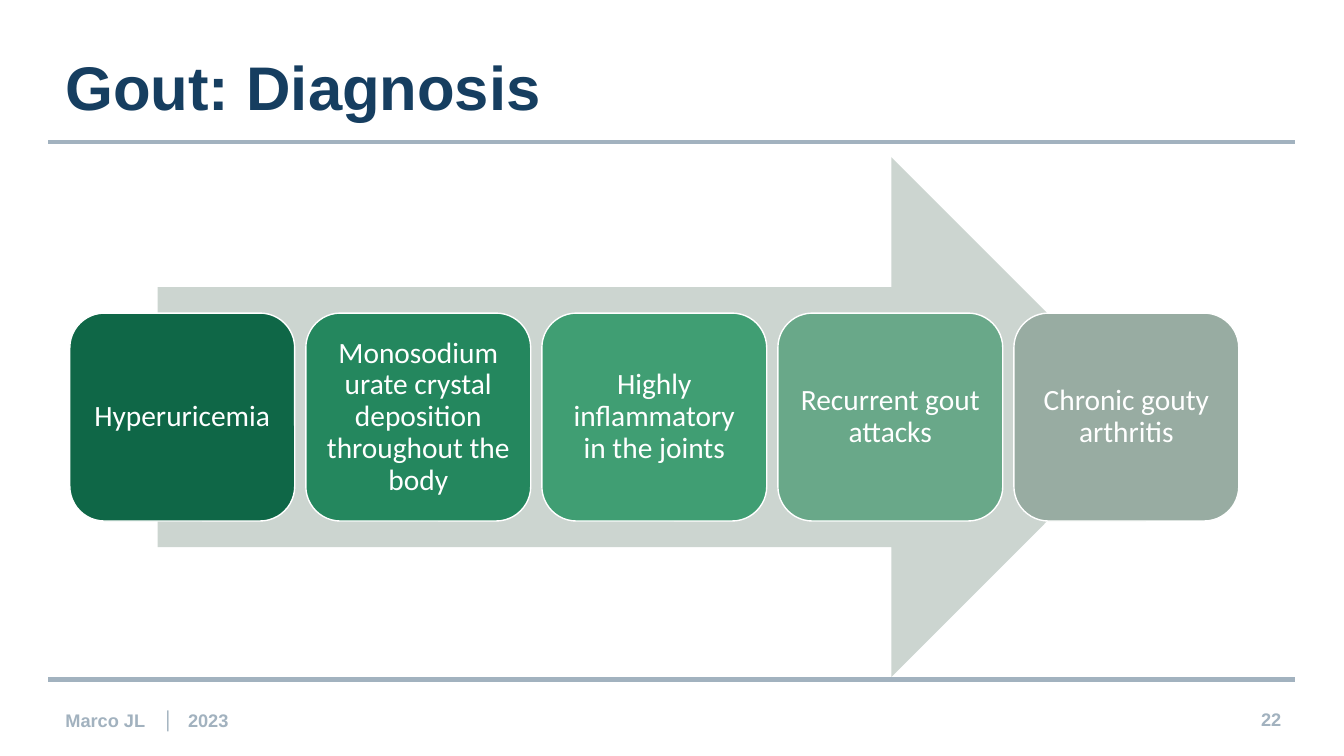
"""Build the gout diagnosis slide: five stages on a process arrow."""
from lxml import etree
from pptx import Presentation
from pptx.dml.color import RGBColor
from pptx.enum.shapes import MSO_CONNECTOR, MSO_SHAPE
from pptx.enum.text import MSO_ANCHOR, PP_ALIGN
from pptx.oxml.ns import qn
from pptx.util import Cm, Pt

ARROW, ROUNDED = MSO_SHAPE.RIGHT_ARROW, MSO_SHAPE.ROUNDED_RECTANGLE
STRAIGHT = MSO_CONNECTOR.STRAIGHT
LEFT, CENTER, RIGHT = PP_ALIGN.LEFT, PP_ALIGN.CENTER, PP_ALIGN.RIGHT
MIDDLE = MSO_ANCHOR.MIDDLE

COLORS = {
    "navy": "163E60", "muted": "A2B2BF", "white": "FFFFFF", "arrow": "CCD5D0",
    "stage1": "0F6747", "stage2": "24875E", "stage3": "409E73",
    "stage4": "69A889", "stage5": "98ACA2",
}
STAGES = [
    ("Hyperuricemia", "stage1"),
    ("Monosodium urate crystal deposition throughout the body", "stage2"),
    ("Highly inflammatory in the joints", "stage3"),
    ("Recurrent gout attacks", "stage4"),
    ("Chronic gouty arthritis", "stage5"),
]


def rgb(name):
    """Return the named colour."""
    return RGBColor.from_string(COLORS[name])


def style(r, size, color, font="Arial", bold=False):
    """Format one run."""
    r.font.size, r.font.name, r.font.bold = Pt(size), font, bold
    r.font.color.rgb = rgb(color)


def add_text(s, box, text, size, color, align=LEFT):
    """Add a bold text box and return its paragraph."""
    tf = s.shapes.add_textbox(*map(Cm, box)).text_frame
    tf.word_wrap = True
    p = tf.paragraphs[0]
    p.text, p.alignment = text, align
    for r in p.runs:
        style(r, size, color, bold=True)
    return p


def add_rule(s, x, y, width):
    """Draw a horizontal rule."""
    line = s.shapes.add_connector(STRAIGHT, Cm(x), Cm(y), Cm(x + width), Cm(y))
    line.line.color.rgb, line.line.width = rgb("muted"), Pt(3)
    etree.SubElement(line._element.spPr, qn("a:effectLst"))


def add_shape(s, kind, box, fill):
    """Add a filled shape without outline or shadow."""
    sp = s.shapes.add_shape(kind, *map(Cm, box))
    sp.shadow.inherit = False
    sp.fill.solid()
    sp.fill.fore_color.rgb = rgb(fill)
    sp.line.fill.background()
    return sp


def add_header(s, x, y, width):
    """Place the title and the rule below it."""
    p = add_text(s, (x + 0.18, y, width - 0.28, 2.08), "Gout: Diagnosis", 44, "navy")
    p.line_spacing = 0.9
    add_rule(s, x, y + 2.26, width)


def add_footer(s, x, y, width):
    """Place the rule, author, year and page number."""
    add_rule(s, x, y, width)
    p = add_text(s, (x + 0.18, y + 0.53, 15.95, 1.22), "Marco JL", 13, "muted")
    tabs = etree.SubElement(p._p.get_or_add_pPr(), qn("a:tabLst"))
    for stop in (2.5, 3.09):
        etree.SubElement(tabs, qn("a:tab"), pos=str(Cm(stop)), algn="l")
    for text, size, font, bold in (("\t|", 16, "Montserrat", False),
                                   ("\t2023", 13, "Arial", True)):
        r = p.add_run()
        r.text = text
        style(r, size, "muted", font, bold)
    add_text(s, (x + width - 1.95, y + 0.61, 1.85, 1.02), "22", 13, "muted", RIGHT)


def add_process(s, x, y, width, height):
    """Place the stages in equal steps over a wide arrow."""
    arrow_w = width * 0.85
    add_shape(s, ARROW, (x + (width - arrow_w) / 2, y, arrow_w, height), "arrow")
    gap = 0.28
    stage_w = (width - gap * (len(STAGES) - 1)) / len(STAGES)
    stage_h = height * 0.4
    for i, (text, fill) in enumerate(STAGES):
        box = (x + i * (stage_w + gap), y + (height - stage_h) / 2, stage_w, stage_h)
        sp = add_shape(s, ROUNDED, box, fill)
        sp.line.color.rgb, sp.line.width = rgb("white"), Pt(1)
        tf = sp.text_frame
        tf.word_wrap, tf.vertical_anchor = True, MIDDLE
        tf.margin_left = tf.margin_right = Cm(0.23)
        tf.margin_top = tf.margin_bottom = Cm(0.23)
        p = tf.paragraphs[0]
        p.text, p.alignment, p.line_spacing = text, CENTER, 0.9
        style(p.runs[0], 21, "white", "Calibri")


def main():
    """Build and save the slide."""
    prs = Presentation()
    prs.slide_width, prs.slide_height = Cm(33.87), Cm(19.05)
    s = prs.slides.add_slide(prs.slide_layouts[6])
    add_header(s, 1.22, 1.32, 31.42)
    add_footer(s, 1.22, 17.12, 31.42)
    add_process(s, 1.76, 3.96, 29.46, 13.1)
    prs.save("out.pptx")


if __name__ == "__main__":
    main()
